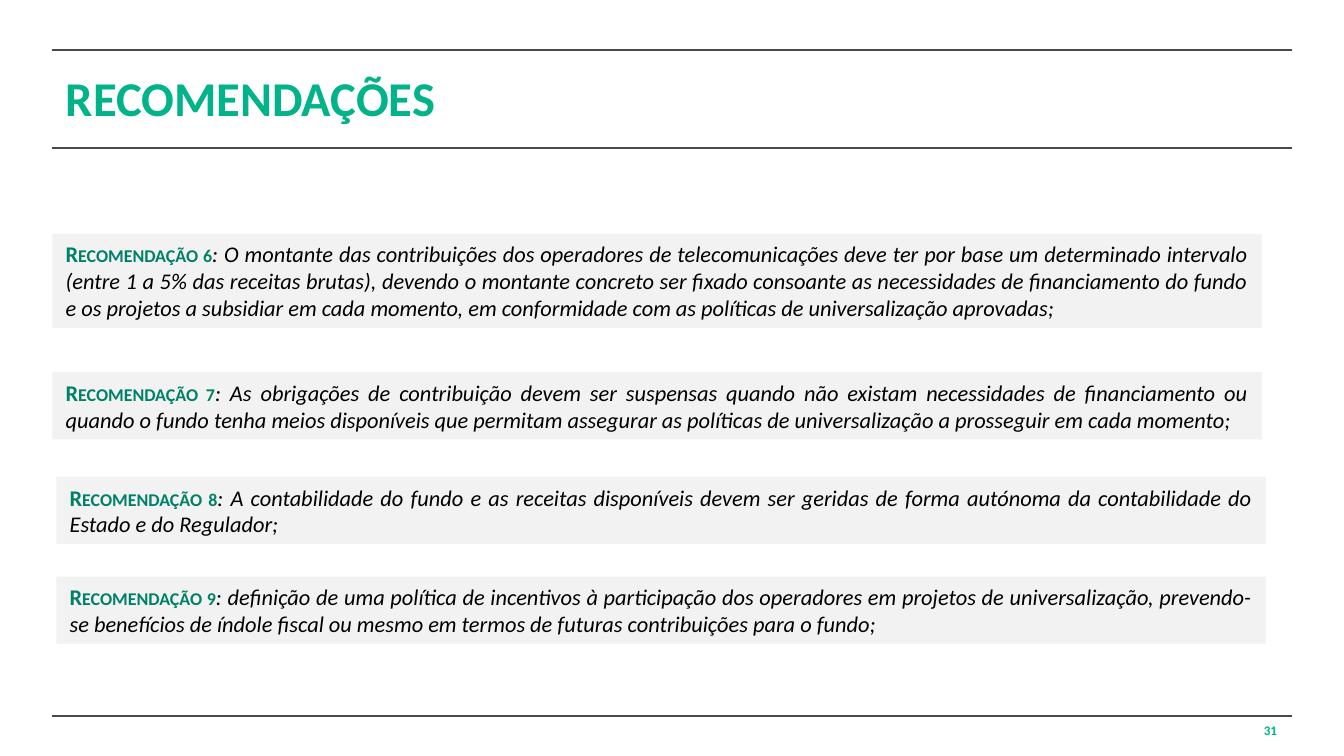
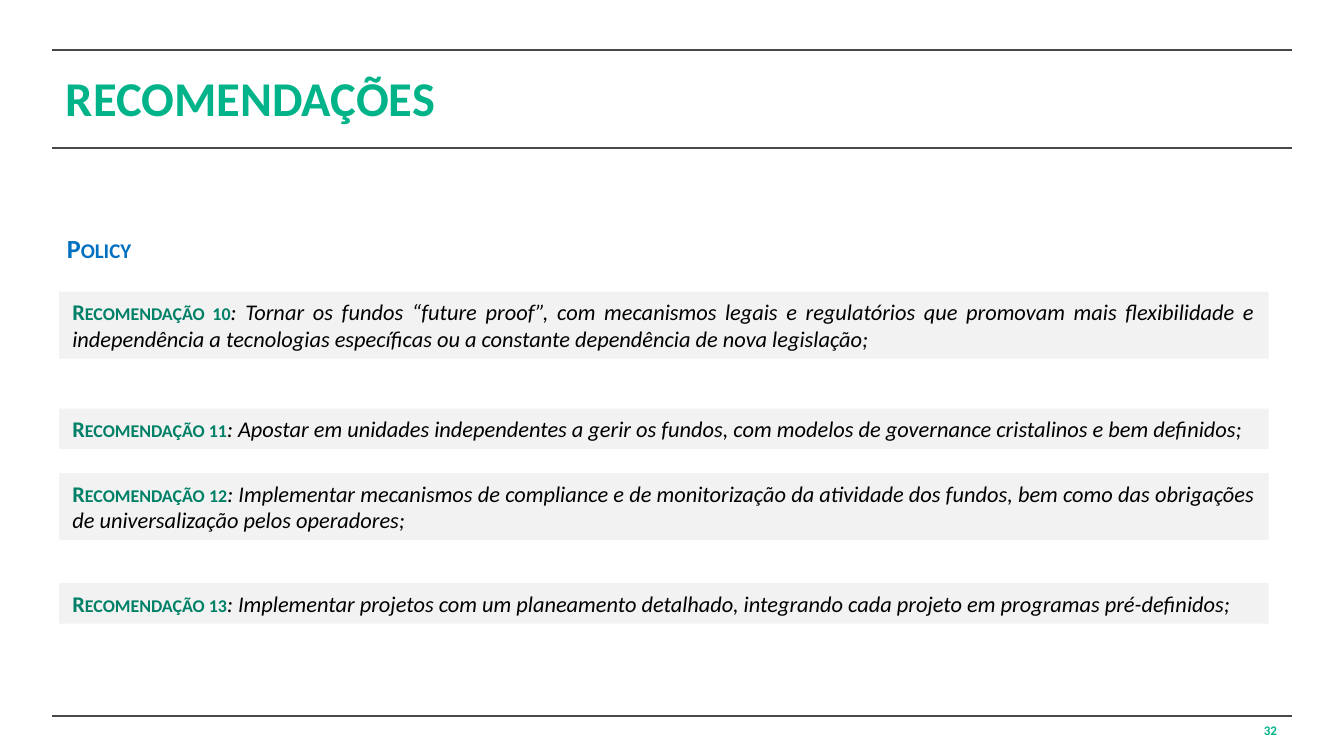
from dataclasses import dataclass
from lxml.etree import SubElement
from pptx import Presentation
from pptx.dml.color import RGBColor
from pptx.enum.shapes import MSO_CONNECTOR, MSO_SHAPE
from pptx.enum.text import MSO_ANCHOR, MSO_AUTO_SIZE, PP_ALIGN
from pptx.oxml.ns import qn
from pptx.util import Inches, Pt


@dataclass(frozen=True)
class Theme:
    font: str = "Calibri"
    green: str = "00B388"
    dark: str = "008167"
    blue: str = "0070C0"
    black: str = "000000"
    panel: str = "F2F2F2"
    rule: str = "494949"
    title: int = 26
    head: int = 14
    body: int = 12
    small: int = 7


theme = Theme()
LEFT, RIGHT = 0.39, 9.61
RULES = (0.37, 1.1, 5.33)
WIDTH, LINE, PAD = 9, 0.2, 0.1

# Each item: number, left, top, lines of text, wording
SLIDES = [
    (31, None, [
        (6, 0.39, 1.74, 3, "O montante das contribuições dos operadores de "
         "telecomunicações deve ter por base um determinado intervalo (entre 1 a 5% "
         "das receitas brutas), devendo o montante concreto ser fixado consoante as "
         "necessidades de financiamento do fundo e os projetos a subsidiar em cada "
         "momento, em conformidade com as políticas de universalização aprovadas;"),
        (7, 0.39, 2.77, 2, "As obrigações de contribuição devem ser suspensas quando "
         "não existam necessidades de financiamento ou quando o fundo tenha meios "
         "disponíveis que permitam assegurar as políticas de universalização a "
         "prosseguir em cada momento;"),
        (8, 0.42, 3.55, 2, "A contabilidade do fundo e as receitas disponíveis devem "
         "ser geridas de forma autónoma da contabilidade do Estado e do Regulador;"),
        (9, 0.42, 4.29, 2, "definição de uma política de incentivos à participação "
         "dos operadores em projetos de universalização, prevendo-se benefícios de "
         "índole fiscal ou mesmo em termos de futuras contribuições para o fundo;"),
    ]),
    (32, "Policy", [
        (10, 0.44, 2.17, 2, "Tornar os fundos “future proof”, com mecanismos legais e "
         "regulatórios que promovam mais flexibilidade e independência a tecnologias "
         "específicas ou a constante dependência de nova legislação;"),
        (11, 0.44, 3.04, 1, "Apostar em unidades independentes a gerir os fundos, com "
         "modelos de governance cristalinos e bem definidos;"),
        (12, 0.44, 3.52, 2, "Implementar mecanismos de compliance e de monitorização "
         "da atividade dos fundos, bem como das obrigações de universalização pelos "
         "operadores;"),
        (13, 0.44, 4.34, 1, "Implementar projetos com um planeamento detalhado, "
         "integrando cada projeto em programas pré-definidos;"),
    ]),
]


def write(para, text, size, color, bold=True, italic=False, caps=False):
    """Add one formatted run; caps means small capitals."""
    run = para.add_run()
    run.text = text
    font = run.font
    font.name, font.size = theme.font, Pt(size)
    font.bold, font.italic = bold, italic
    font.color.rgb = RGBColor.from_string(color)
    if caps:
        run._r.get_or_add_rPr().set("cap", "small")


prs = Presentation()
prs.slide_width = Inches(10)
prs.slide_height = prs.slide_width * 9 // 16
layout = prs.slide_layouts[5]
slides = [prs.slides.add_slide(layout) for _ in SLIDES]

# The rules are drawn once and kept on the shared layout
for y in RULES:
    rule = slides[0].shapes.add_connector(
        MSO_CONNECTOR.STRAIGHT, Inches(LEFT), Inches(y), Inches(RIGHT), Inches(y))
    rule.line.color.rgb = RGBColor.from_string(theme.rule)
    rule.line.width = Pt(1)
    SubElement(rule.element.spPr, qn("a:effectLst"))
    layout.shapes.element.append(rule.element)

for slide, (page, head, items) in zip(slides, SLIDES):
    shapes = slide.shapes

    title = shapes.title
    title.left, title.top = Inches(LEFT), Inches(RULES[0])
    title.width, title.height = Inches(9.21), Inches(0.71)
    frame = title.text_frame
    frame.vertical_anchor = MSO_ANCHOR.MIDDLE
    frame.paragraphs[0].alignment = PP_ALIGN.LEFT
    write(frame.paragraphs[0], "RECOMENDAÇÕES", theme.title, theme.green)

    if head:
        label = shapes.add_textbox(Inches(0.4), Inches(1.68), Inches(0.69), Inches(0.34))
        frame = label.text_frame
        frame.word_wrap = False
        frame.auto_size = MSO_AUTO_SIZE.SHAPE_TO_FIT_TEXT
        write(frame.paragraphs[0], head, theme.head, theme.blue, caps=True)

    for num, left, top, lines, text in items:
        panel = shapes.add_shape(
            MSO_SHAPE.RECTANGLE, Inches(left), Inches(top),
            Inches(WIDTH), Inches(PAD + LINE * lines))
        panel.shadow.inherit = False
        panel.fill.solid()
        panel.fill.fore_color.rgb = RGBColor.from_string(theme.panel)
        panel.line.fill.background()
        frame = panel.text_frame
        frame.word_wrap = True
        frame.auto_size = MSO_AUTO_SIZE.SHAPE_TO_FIT_TEXT
        frame.vertical_anchor = MSO_ANCHOR.TOP
        para = frame.paragraphs[0]
        para.alignment = PP_ALIGN.JUSTIFY
        write(para, f"Recomendação {num}", theme.body, theme.dark, caps=True)
        write(para, f": {text}", theme.body, theme.black, bold=False, italic=True)

    foot = shapes.add_textbox(Inches(7.27), Inches(RULES[-1]), Inches(2.33), Inches(0.2))
    foot.text_frame.word_wrap = True
    para = foot.text_frame.paragraphs[0]
    para.alignment = PP_ALIGN.RIGHT
    write(para, str(page), theme.small, theme.green)

prs.save("out.pptx")
